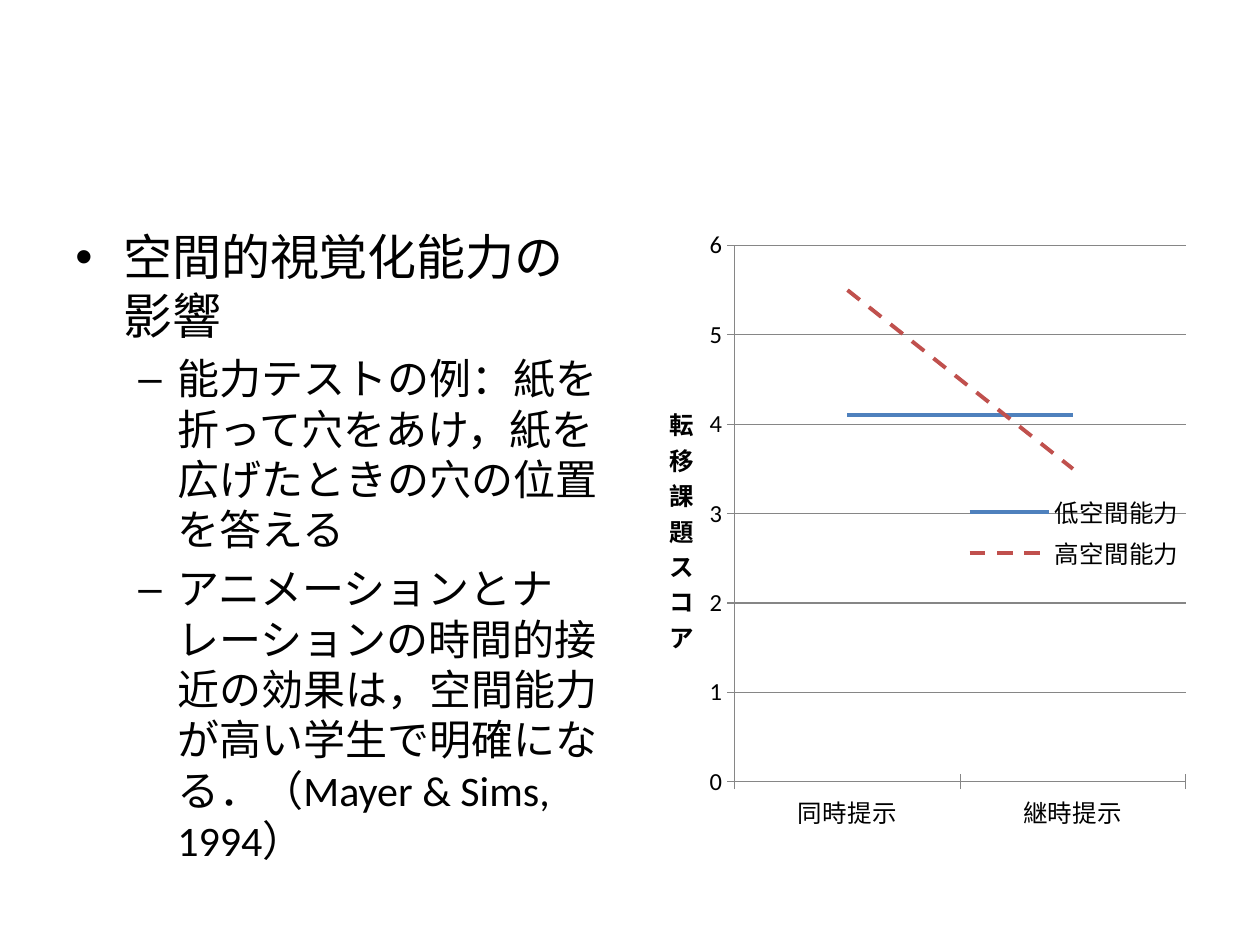
"""Build a slide with a bullet list beside a line chart on spatial ability."""
import dataclasses

import lxml.etree
import pptx
import pptx.chart.data
import pptx.dml.color
import pptx.enum.chart
import pptx.enum.dml
import pptx.oxml.ns
import pptx.util

Inches = pptx.util.Inches
Pt = pptx.util.Pt
qn = pptx.oxml.ns.qn
Dash = pptx.enum.dml.MSO_LINE


@dataclasses.dataclass(frozen=True)
class Theme:
    """Hold the colours, font and type sizes of the slide."""

    font: str = "Calibri"
    text: str = "000000"
    axis: str = "868686"
    background: str = "FFFFFF"
    low: str = "4F81BD"
    high: str = "C0504D"
    chart_size: int = 14
    base_size: int = 10
    series_width: float = 2.25
    axis_width: float = 0.75


THEME = Theme()

LEVELS = (
    {"size": 28, "bullet": "•", "left": 0.38, "hanging": 0.38},
    {"size": 24, "bullet": "–", "left": 0.81, "hanging": 0.31},
)

POINTS = (
    (0, "空間的視覚化能力の影響"),
    (1, "能力テストの例：紙を折って穴をあけ，紙を広げたときの穴の位置を答える"),
    (1, "アニメーションとナレーションの時間的接近の効果は，空間能力が高い学生で"
        "明確になる．（Mayer & Sims, 1994）"),
)

CATEGORIES = ("同時提示", "継時提示")
SERIES = (
    ("低空間能力", (4.1, 4.1), THEME.low, Dash.SOLID),
    ("高空間能力", (5.5, 3.5), THEME.high, Dash.DASH),
)


def rgb(value):
    """Turn a hex string into a colour."""
    return pptx.dml.color.RGBColor.from_string(value)


def set_attributes(target, values):
    """Set each named attribute on the target."""
    for name, value in values.items():
        setattr(target, name, value)


def style_font(font, size, **extra):
    """Give a font the theme's face and colour at one size."""
    set_attributes(font, {"name": THEME.font, "size": Pt(size), **extra})
    font.color.rgb = rgb(THEME.text)


def style_line(line, colour, width, dash=Dash.SOLID):
    """Give a line its colour, width and dash."""
    line.color.rgb = rgb(colour)
    set_attributes(line, {"width": Pt(width), "dash_style": dash})


def set_bullet(paragraph, level):
    """Give a paragraph the hanging indent and bullet of its level."""
    properties = paragraph._p.get_or_add_pPr()
    properties.set("marL", str(Inches(level["left"])))
    properties.set("indent", str(-Inches(level["hanging"])))
    lxml.etree.SubElement(properties, qn("a:buFont"), typeface="Arial")
    lxml.etree.SubElement(properties, qn("a:buChar"), char=level["bullet"])


def set_layout(parent, position, box, inner=False):
    """Fix a chart part's place as fractions of the chart."""
    for old in parent.findall(qn("c:layout")):
        parent.remove(old)
    layout = lxml.etree.Element(qn("c:layout"))
    parent.insert(position, layout)
    manual = lxml.etree.SubElement(layout, qn("c:manualLayout"))
    target = {"layoutTarget": "inner"} if inner else {}
    modes = {"xMode": "edge", "yMode": "edge"}
    places = dict(zip("xywh", map(str, box)))
    for tag, value in {**target, **modes, **places}.items():
        lxml.etree.SubElement(manual, qn("c:" + tag), val=value)


def add_points(slide, box):
    """Place the bullet list in the box."""
    frame = slide.shapes.add_textbox(*box).text_frame
    frame.word_wrap = True
    for index, (depth, text) in enumerate(POINTS):
        level = LEVELS[depth]
        paragraph = frame.add_paragraph() if index else frame.paragraphs[0]
        set_attributes(paragraph, {
            "level": depth, "space_before": Pt(level["size"] * 0.2)})
        set_bullet(paragraph, level)
        run = paragraph.add_run()
        run.text = text
        style_font(run.font, level["size"])


def style_axes(chart):
    """Style both axes, the gridlines and the stacked value title."""
    for axis in (chart.category_axis, chart.value_axis):
        set_attributes(axis, {
            "major_tick_mark": pptx.enum.chart.XL_TICK_MARK.CROSS,
            "minor_tick_mark": pptx.enum.chart.XL_TICK_MARK.NONE})
        style_font(axis.tick_labels.font, THEME.chart_size)
        style_line(axis.format.line, THEME.axis, THEME.axis_width)
    values = chart.value_axis
    set_attributes(values, {
        "minimum_scale": 0, "maximum_scale": 6, "major_unit": 1,
        "has_major_gridlines": True, "has_title": True})
    style_line(values.major_gridlines.format.line, THEME.axis, THEME.axis_width)
    frame = values.axis_title.text_frame
    frame.text = "転移課題スコア"
    style_font(frame.paragraphs[0].runs[0].font, THEME.chart_size, bold=True)
    body = frame._txBody.find(qn("a:bodyPr"))
    body.set("rot", "0")
    body.set("vert", "wordArtVertRtl")


def add_score_chart(slide, box):
    """Place the line chart of transfer scores in the box."""
    data = pptx.chart.data.CategoryChartData()
    data.categories = CATEGORIES
    for name, scores, _, _ in SERIES:
        data.add_series(name, scores)
    chart = slide.shapes.add_chart(
        pptx.enum.chart.XL_CHART_TYPE.LINE, *box, data).chart
    set_attributes(chart, {"has_title": False, "has_legend": True})
    style_font(chart.font, THEME.base_size)
    chart.plots[0].vary_by_categories = False
    for series, (_, _, colour, dash) in zip(chart.plots[0].series, SERIES):
        series.smooth = False
        style_line(series.format.line, colour, THEME.series_width, dash)
    style_axes(chart)
    set_attributes(chart.legend, {
        "position": pptx.enum.chart.XL_LEGEND_POSITION.RIGHT,
        "include_in_layout": True})
    style_font(chart.legend.font, THEME.chart_size)
    set_layout(chart.legend._element, 1, (0.58, 0.43, 0.4, 0.14))
    plot_area = chart._chartSpace.chart.plotArea
    set_layout(plot_area, 0, (0.17, 0.04, 0.81, 0.86), inner=True)


def main():
    """Build the slide and save it."""
    presentation = pptx.Presentation()
    set_attributes(presentation, {
        "slide_width": Inches(10), "slide_height": Inches(7.5)})
    slide = presentation.slides.add_slide(presentation.slide_layouts[6])
    slide.background.fill.solid()
    slide.background.fill.fore_color.rgb = rgb(THEME.background)
    margin, top, width, height = map(Inches, (0.5, 1.75, 4.42, 4.95))
    right = presentation.slide_width - margin - width
    add_points(slide, (margin, top, width, height))
    add_score_chart(slide, (right, top, width, height))
    presentation.save("out.pptx")


if __name__ == "__main__":
    main()
